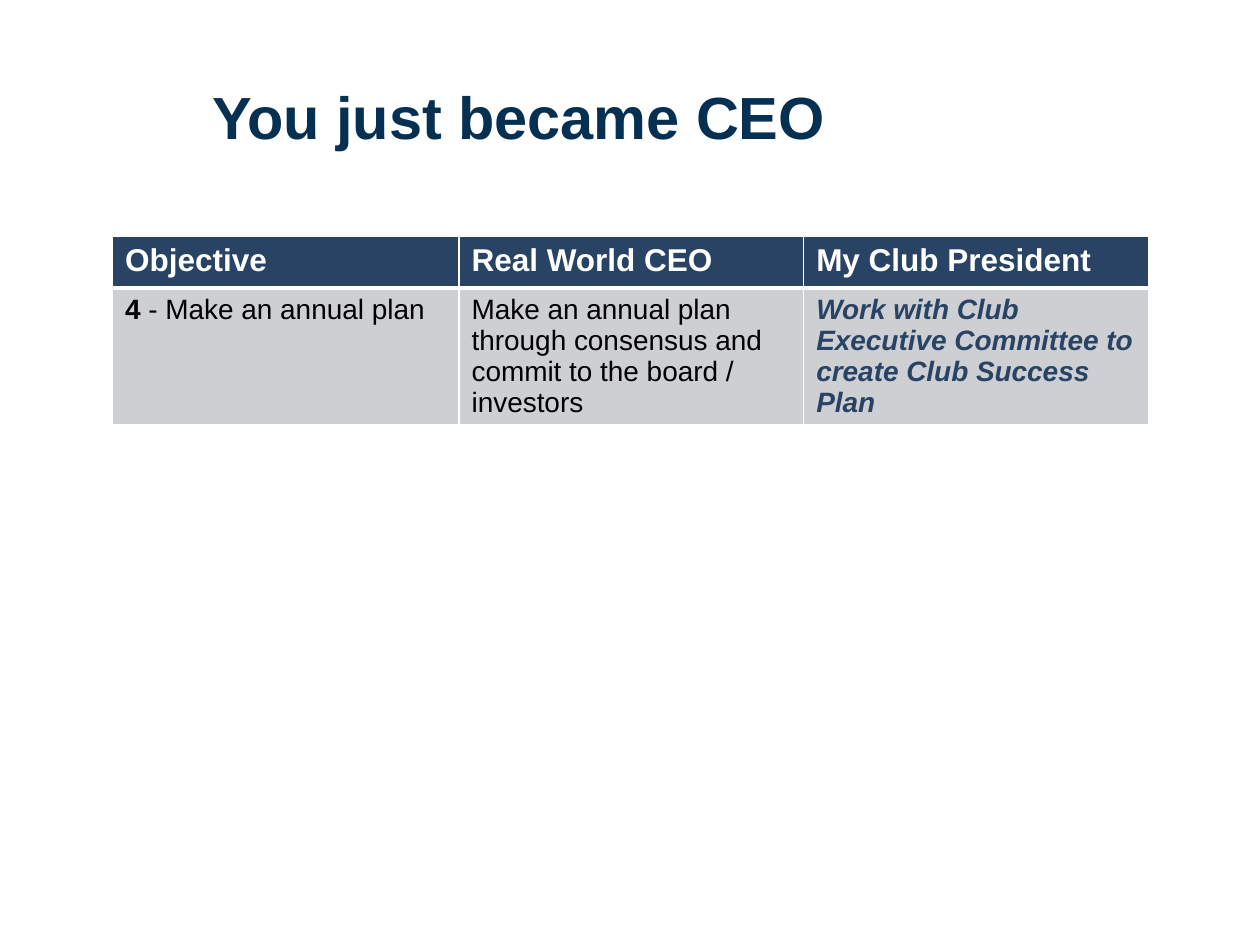
from lxml import etree
from pptx import Presentation
from pptx.dml.color import RGBColor
from pptx.enum import text
from pptx.oxml import ns
from pptx.util import Pt

FONT = "Arial"
COLORS = {
    "title": "063052",
    "navy": "294364",
    "gray": "CDCFD3",
    "white": "FFFFFF",
    "black": "000000",
}
HEADINGS = ["Objective", "Real World CEO", "My Club President"]
COLUMN_WIDTHS = [198, 197, 197]
ROW_HEIGHTS = [29.5, 78]


def rgb(name):
    return RGBColor.from_string(COLORS[name])


def set_font(font, size, color, bold=False, italic=False):
    font.name = FONT
    font.size = Pt(size)
    font.color.rgb = rgb(color)
    font.bold = bold
    font.italic = italic


def add_title(slide, wording):
    title = slide.shapes.title
    title.left, title.top, title.width, title.height = Pt(114), Pt(42), Pt(588), Pt(48)
    frame = title.text_frame
    frame.text = wording
    frame.word_wrap = True
    frame.auto_size = text.MSO_AUTO_SIZE.NONE
    frame.vertical_anchor = text.MSO_ANCHOR.MIDDLE
    heading = frame.paragraphs[0]
    heading.alignment = text.PP_ALIGN.LEFT
    set_font(heading.font, 34, "title", bold=True)


def set_borders(cell, top, bottom):
    properties = cell._tc.get_or_add_tcPr()
    widths = {"lnL": 1, "lnR": 1, "lnT": top, "lnB": bottom}
    for position, (side, width) in enumerate(widths.items()):
        line = etree.Element(ns.qn(f"a:{side}"), w=str(Pt(width)))
        fill = etree.SubElement(line, ns.qn("a:solidFill"))
        etree.SubElement(fill, ns.qn("a:srgbClr"), val=COLORS["white"])
        properties.insert(position, line)


def fill_cell(cell, wording, fill, top, bottom, **style):
    cell.text = wording
    cell.fill.solid()
    cell.fill.fore_color.rgb = rgb(fill)
    set_borders(cell, top, bottom)
    set_font(cell.text_frame.paragraphs[0].font, **style)


def add_plan_table(slide):
    frame = slide.shapes.add_table(
        2, 3, Pt(64.3), Pt(135), Pt(sum(COLUMN_WIDTHS)), Pt(sum(ROW_HEIGHTS))
    )
    table = frame.table
    for column, width in zip(table.columns, COLUMN_WIDTHS):
        column.width = Pt(width)
    for row, height in zip(table.rows, ROW_HEIGHTS):
        row.height = Pt(height)

    for column, heading in enumerate(HEADINGS):
        fill_cell(table.cell(0, column), heading, "navy", 1, 3,
                  size=18, color="white", bold=True)

    objective, real_world, club = table.rows[1].cells
    fill_cell(objective, "", "gray", 3, 1, size=16, color="black")
    paragraph = objective.text_frame.paragraphs[0]
    for wording, bold in [("4 ", True), ("- Make an annual plan", False)]:
        run = paragraph.add_run()
        run.text = wording
        set_font(run.font, 16, "black", bold)
    fill_cell(real_world,
              "Make an annual plan through consensus and commit to the board / investors",
              "gray", 3, 1, size=16, color="black")
    fill_cell(club,
              "Work with Club Executive Committee to create Club Success Plan",
              "gray", 3, 1, size=16, color="navy", bold=True, italic=True)


def main():
    deck = Presentation()
    deck.slide_width, deck.slide_height = Pt(720), Pt(540)
    slide = deck.slides.add_slide(deck.slide_layouts[5])
    add_title(slide, "You just became CEO")
    add_plan_table(slide)
    deck.save("out.pptx")


if __name__ == "__main__":
    main()
